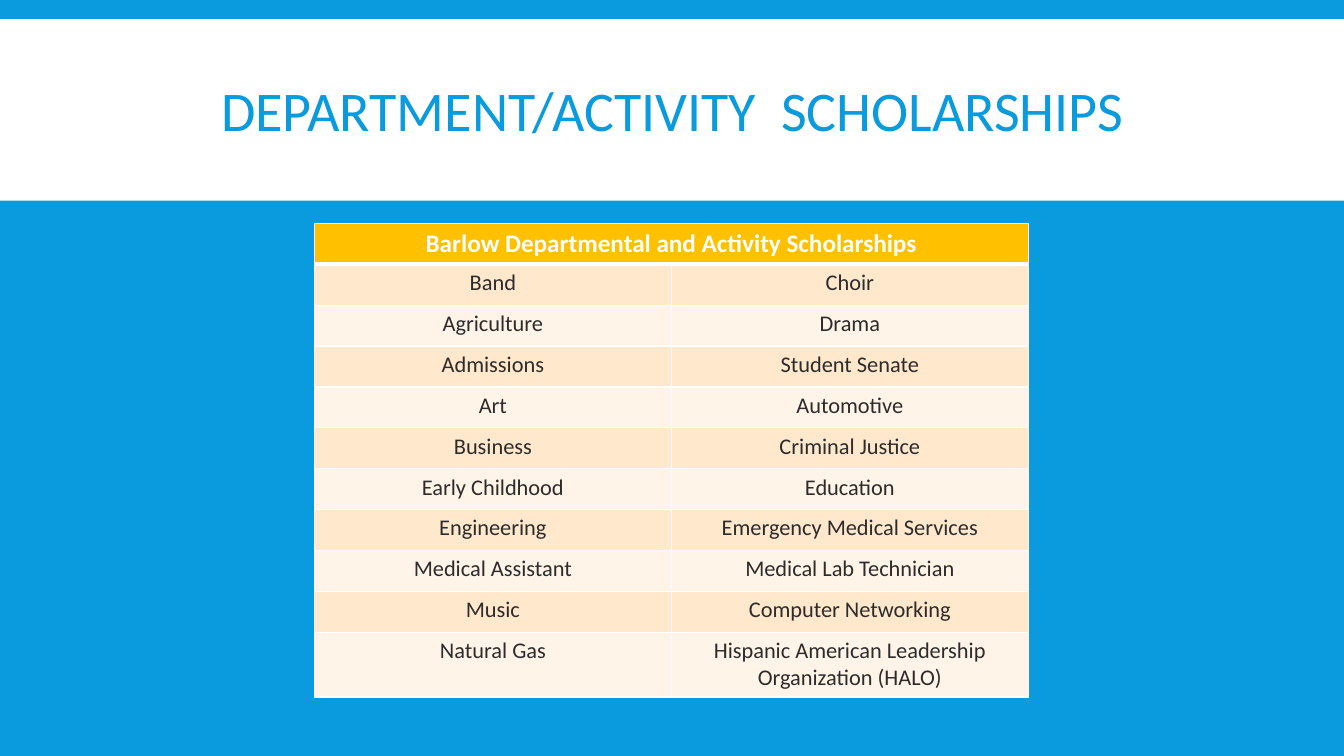
from dataclasses import dataclass

from lxml import etree
from pptx import Presentation
from pptx.dml.color import RGBColor
from pptx.enum import shapes, text
from pptx.oxml import ns
from pptx.util import Pt

BLUE = RGBColor(0x09, 0x9B, 0xDD)
WHITE = RGBColor(0xFF, 0xFF, 0xFF)
GOLD = RGBColor(0xFF, 0xC0, 0x00)
PEACH = RGBColor(0xFF, 0xE8, 0xCC)
CREAM = RGBColor(0xFF, 0xF4, 0xE7)
INK = RGBColor(0x2C, 0x2C, 0x2C)


@dataclass
class Award:
    left: str
    right: str


AWARDS = [
    Award("Band", "Choir"),
    Award("Agriculture", "Drama"),
    Award("Admissions", "Student Senate"),
    Award("Art", "Automotive"),
    Award("Business", "Criminal Justice"),
    Award("Early Childhood", "Education"),
    Award("Engineering", "Emergency Medical Services"),
    Award("Medical Assistant", "Medical Lab Technician"),
    Award("Music", "Computer Networking"),
    Award("Natural Gas", "Hispanic American Leadership Organization (HALO)"),
]


def write(frame, words: str, *, size: float, color: RGBColor,
          bold: bool = False, space: float = 1.0) -> None:
    para = frame.paragraphs[0]
    para.alignment = text.PP_ALIGN.CENTER
    para.line_spacing = space
    run = para.add_run()
    run.text = words
    run.font.name = "Calibri"
    run.font.size = Pt(size)
    run.font.bold = bold
    run.font.color.rgb = color


def edge(cell, top: float, base: float) -> None:
    props = cell._tc.get_or_add_tcPr()
    widths = {"a:lnL": 1, "a:lnR": 1, "a:lnT": top, "a:lnB": base}
    for spot, (tag, width) in enumerate(widths.items()):
        line = etree.Element(ns.qn(tag), w=str(Pt(width)))
        fill = etree.SubElement(line, ns.qn("a:solidFill"))
        etree.SubElement(fill, ns.qn("a:srgbClr"), val=str(WHITE))
        props.insert(spot, line)


def paint(cell, color: RGBColor, top: float = 1, base: float = 1) -> None:
    cell.fill.solid()
    cell.fill.fore_color.rgb = color
    edge(cell, top, base)


def add_title(slide) -> None:
    title = slide.shapes.title
    title.left, title.top = Pt(95), Pt(22.3)
    title.width, title.height = Pt(770.4), Pt(118.8)
    frame = title.text_frame
    frame.word_wrap = True
    frame.auto_size = text.MSO_AUTO_SIZE.NONE
    frame.vertical_anchor = text.MSO_ANCHOR.MIDDLE
    write(frame, "DEPARTMENT/ACTIVITY  SCHOLARSHIPS",
          size=40, color=BLUE, space=0.85)

    band = slide.shapes.add_shape(shapes.MSO_SHAPE.RECTANGLE,
                                  0, Pt(13.7), Pt(960), Pt(129.6))
    band.shadow.inherit = False
    band.fill.solid()
    band.fill.fore_color.rgb = WHITE
    band.line.fill.background()
    title._element.addprevious(band._element)


def add_awards(slide) -> None:
    count = len(AWARDS) + 1
    grid = slide.shapes.add_table(count, 2, Pt(224.6), Pt(159.6),
                                  Pt(510), Pt(29.2 * count)).table
    for row in grid.rows:
        row.height = Pt(29.2)

    head = grid.cell(0, 0)
    head.merge(grid.cell(0, 1))
    for cell in grid.rows[0].cells:
        paint(cell, GOLD, base=3)
    write(head.text_frame, "Barlow Departmental and Activity Scholarships",
          size=18, color=WHITE, bold=True)

    for row, award in enumerate(AWARDS, 1):
        for col, words in enumerate((award.left, award.right)):
            cell = grid.cell(row, col)
            paint(cell, PEACH if row % 2 else CREAM, top=3 if row == 1 else 1)
            write(cell.text_frame, words, size=16, color=INK)


def main() -> None:
    deck = Presentation()
    deck.slide_width, deck.slide_height = Pt(960), Pt(540)
    slide = deck.slides.add_slide(deck.slide_layouts[5])
    slide.background.fill.solid()
    slide.background.fill.fore_color.rgb = BLUE
    add_title(slide)
    add_awards(slide)
    deck.save("out.pptx")


if __name__ == "__main__":
    main()
